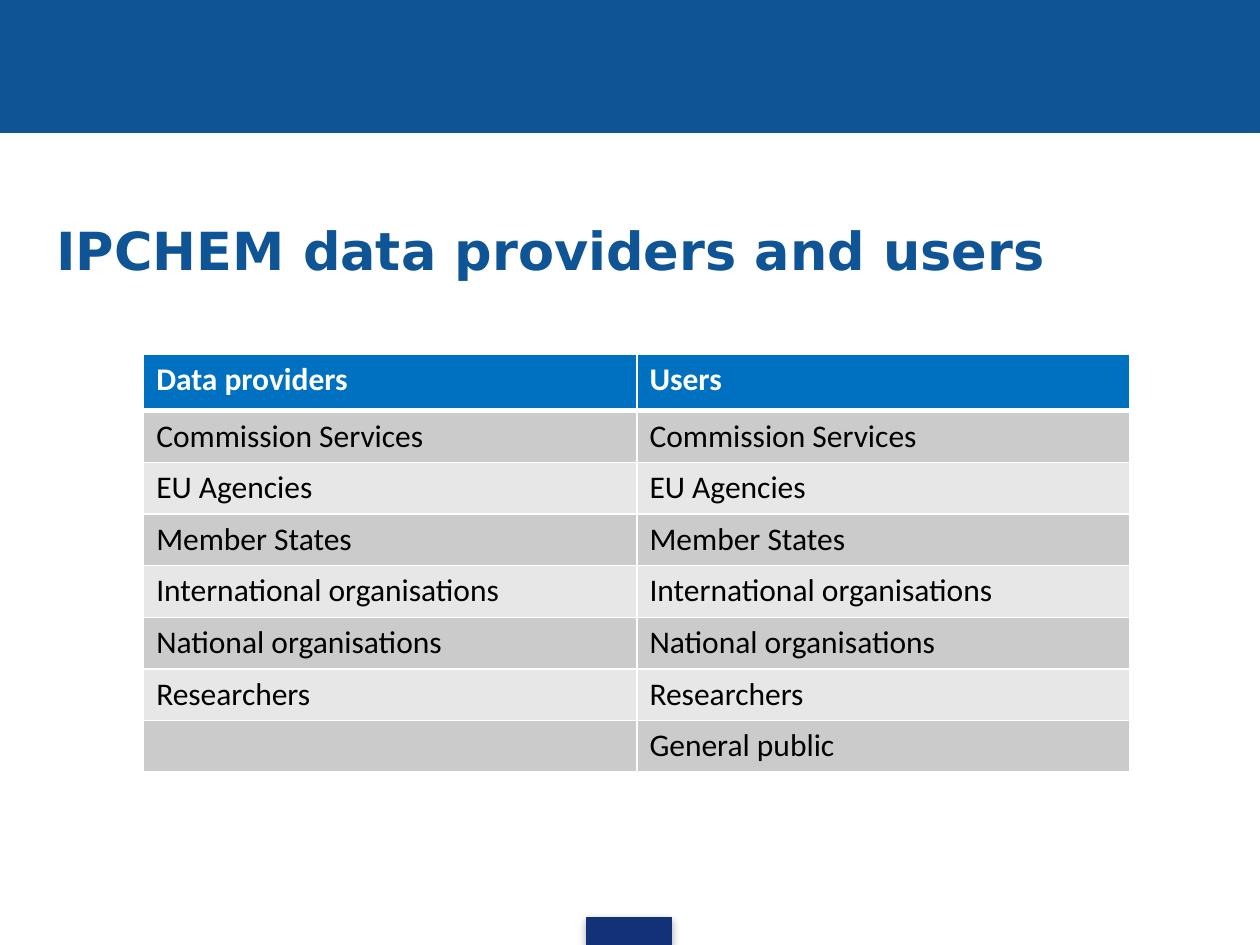
"""Build the slide on IPCHEM data providers and users."""
from dataclasses import dataclass

import pptx
import pptx.dml.color
import pptx.enum.shapes
import pptx.enum.text
import pptx.oxml
import pptx.oxml.ns
import pptx.util
from pptx.util import Inches


@dataclass(frozen=True)
class Theme:
    banner: str = "0F5494"
    tab: str = "133176"
    header: str = "0070C0"
    bands: tuple = ("CBCBCB", "E7E7E7")
    light: str = "FFFFFF"
    dark: str = "000000"
    title_font: str = "DejaVu Sans"
    table_font: str = "Calibri"
    title_size: int = 30
    table_size: int = 18
    border: int = 1
    header_border: int = 3


THEME = Theme()
SHARED_GROUPS = ["Commission Services", "EU Agencies", "Member States",
                 "International organisations", "National organisations", "Researchers"]
ROWS = [("Data providers", "Users"),
        *((group, group) for group in SHARED_GROUPS),
        ("", "General public")]


def rgb(value):
    return pptx.dml.color.RGBColor.from_string(value)


def format_runs(paragraph, name, size, color, bold):
    for run in paragraph.runs:
        run.font.name = name
        run.font.size = pptx.util.Pt(size)
        run.font.color.rgb = rgb(color)
        run.font.bold = bold


def add_bar(slide, left, top, width, height, color):
    shape = slide.shapes.add_shape(
        pptx.enum.shapes.MSO_SHAPE.RECTANGLE,
        Inches(left), Inches(top), Inches(width), Inches(height))
    shape.shadow.inherit = False
    shape.fill.solid()
    shape.fill.fore_color.rgb = rgb(color)
    shape.line.color.rgb = rgb(color)
    shape.line.width = pptx.util.Pt(0.75)
    return shape


def add_shadow(shape):
    effects = shape._element.spPr.find(pptx.oxml.ns.qn("a:effectLst"))
    effects.append(pptx.oxml.parse_xml(
        f'<a:outerShdw {pptx.oxml.ns.nsdecls("a")} blurRad="{pptx.util.Pt(5)}" '
        f'dist="{pptx.util.Pt(1.8)}" dir="5400000" rotWithShape="0">'
        f'<a:srgbClr val="{THEME.dark}"><a:alpha val="35000"/></a:srgbClr></a:outerShdw>'))


def add_title(slide, text):
    box = slide.shapes.add_textbox(Inches(-0.04), Inches(1.47), Inches(10.24), Inches(1.02))
    box.text_frame.word_wrap = True
    box.text_frame.vertical_anchor = pptx.enum.text.MSO_ANCHOR.MIDDLE
    box.text_frame.text = text
    paragraph = box.text_frame.paragraphs[0]
    paragraph._p.get_or_add_pPr().set("marL", str(Inches(0.39)))
    format_runs(paragraph, THEME.title_font, THEME.title_size, THEME.banner, True)


def set_borders(cell, top, bottom):
    properties = cell._tc.get_or_add_tcPr()
    widths = {"lnL": THEME.border, "lnR": THEME.border, "lnT": top, "lnB": bottom}
    for side, width in widths.items():
        properties.append(pptx.oxml.parse_xml(
            f'<a:{side} {pptx.oxml.ns.nsdecls("a")} w="{pptx.util.Pt(width)}">'
            f'<a:solidFill><a:srgbClr val="{THEME.light}"/></a:solidFill></a:{side}>'))


def format_cell(cell, text, row):
    is_header = row == 0
    set_borders(cell,
                THEME.header_border if row == 1 else THEME.border,
                THEME.header_border if is_header else THEME.border)
    cell.fill.solid()
    cell.fill.fore_color.rgb = rgb(THEME.header if is_header else THEME.bands[(row - 1) % 2])
    cell.text_frame.text = text
    format_runs(cell.text_frame.paragraphs[0], THEME.table_font, THEME.table_size,
                THEME.light if is_header else THEME.dark, is_header)


def add_group_table(slide, rows):
    table = slide.shapes.add_table(
        len(rows), len(rows[0]),
        Inches(1.14), Inches(2.81), Inches(7.83), Inches(3.31)).table
    for row, texts in enumerate(rows):
        table.rows[row].height = Inches(0.41 if row else 0.45)
        for column, text in enumerate(texts):
            format_cell(table.cell(row, column), text, row)


def main():
    presentation = pptx.Presentation()
    presentation.slide_width = Inches(10)
    presentation.slide_height = Inches(7.5)
    slide = presentation.slides.add_slide(presentation.slide_layouts[6])
    add_bar(slide, 0, 0, 10, 1.05, THEME.banner)
    add_shadow(add_bar(slide, 4.66, 7.28, 0.67, 0.22, THEME.tab))
    add_title(slide, "IPCHEM data providers and users")
    add_group_table(slide, ROWS)
    presentation.save("out.pptx")


if __name__ == "__main__":
    main()
